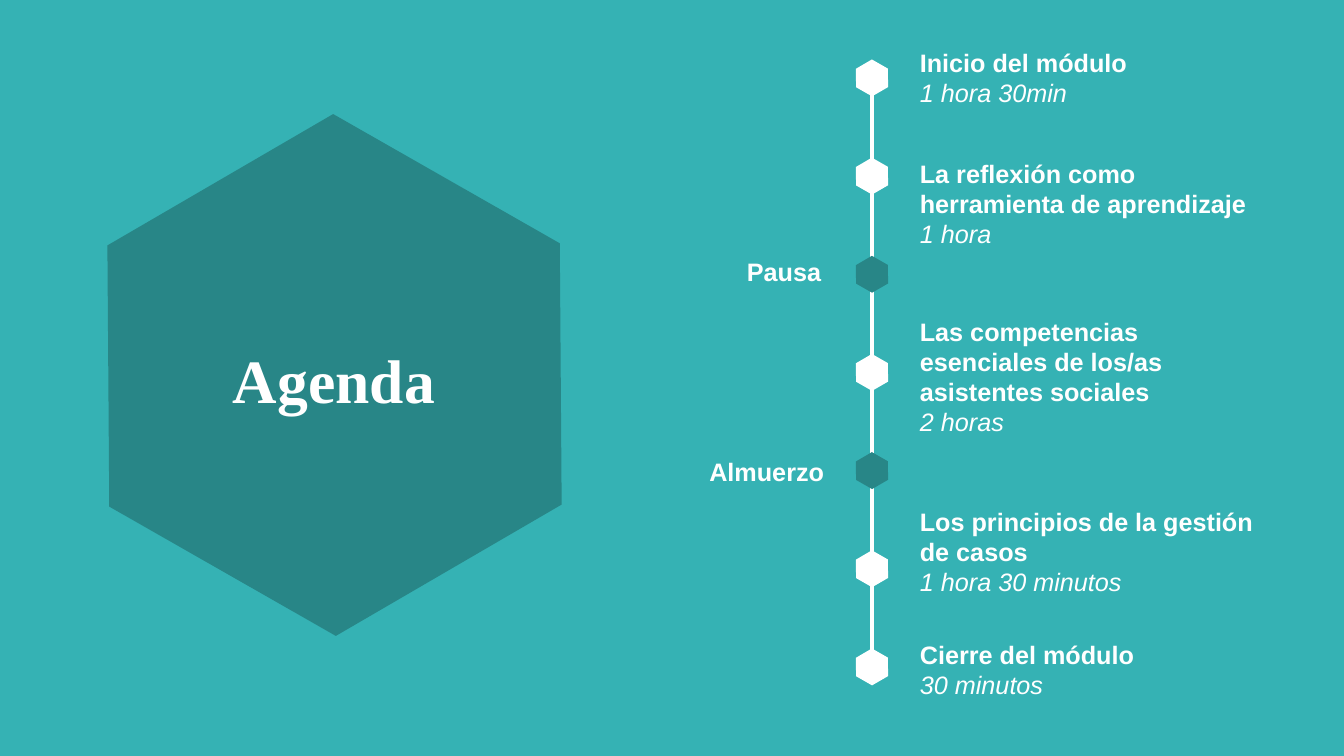
from lxml import etree
from pptx import Presentation
from pptx.dml.color import RGBColor
from pptx.enum.shapes import MSO_CONNECTOR, MSO_SHAPE
from pptx.enum.text import MSO_ANCHOR, PP_ALIGN
from pptx.oxml.ns import qn
from pptx.util import Pt

# Content: (heading, duration, left, top, width, height)
TITLE = "Agenda"
SESSIONS = [
    ("Inicio del módulo", "1 hora 30min", 910, 42, 285, 72),
    ("La reflexión como herramienta de aprendizaje", "1 hora", 910, 153, 362, 102),
    ("Las competencias esenciales de los/as asistentes sociales", "2 horas",
     910, 311, 362, 132),
    ("Los principios de la gestión de casos", "1 hora 30 minutos", 910, 501, 362, 132),
    ("Cierre del módulo", "30 minutos", 910, 634, 362, 72),
]
BREAKS = [("Pausa", 682, 251, 149, 40), ("Almuerzo", 685, 451, 149, 40)]
STOPS = ["session", "session", "break", "session", "break", "session", "session"]

COLORS = {"background": "35B2B4", "dark": "288687", "white": "FFFFFF"}
STOP_COLORS = {"session": "white", "break": "dark"}
HEXAGON_ANGLE = 29.7
LINE_X, FIRST_Y, LAST_Y = 872, 78, 667
STOP_WIDTH, STOP_HEIGHT = 37, 32


def px(length):
    return round(length * 914400 / 100.8)


def color(name):
    return RGBColor.from_string(COLORS[name])


def add_hexagon(left, top, width, height, fill):
    shape = slide.shapes.add_shape(
        MSO_SHAPE.HEXAGON, px(left), px(top), px(width), px(height))
    shape.adjustments[0] = 0.29
    shape.rotation = HEXAGON_ANGLE
    shape.shadow.inherit = False
    shape.fill.solid()
    shape.fill.fore_color.rgb = color(fill)
    shape.line.fill.background()
    return shape


def format_font(paragraph, name, size, bold=True, italic=False):
    font = paragraph.font
    font.name, font.size, font.bold, font.italic = name, Pt(size), bold, italic
    font.color.rgb = color("white")


def add_label(left, top, width, height, heading, duration=None, align=PP_ALIGN.LEFT):
    box = slide.shapes.add_textbox(px(left), px(top), px(width), px(height))
    frame = box.text_frame
    frame.word_wrap = True
    paragraph = frame.paragraphs[0]
    paragraph.text = heading
    paragraph.alignment = align
    format_font(paragraph, "Arial", 18)
    if duration:
        paragraph = frame.add_paragraph()
        paragraph.text = duration
        format_font(paragraph, "Arial", 18, bold=False, italic=True)


presentation = Presentation()
presentation.slide_width, presentation.slide_height = px(1344), px(756)
slide = presentation.slides.add_slide(presentation.slide_layouts[5])
slide.background.fill.solid()
slide.background.fill.fore_color.rgb = color("background")

# Title in front of the large hexagon
large_hexagon = add_hexagon(73, 149, 523, 452, "dark")
title = slide.shapes.title
title.left, title.top, title.width, title.height = px(113), px(353), px(442), px(61)
title.text_frame.text = TITLE
title.text_frame.vertical_anchor = MSO_ANCHOR.MIDDLE
title_paragraph = title.text_frame.paragraphs[0]
title_paragraph.alignment = PP_ALIGN.CENTER
title_paragraph.line_spacing = 0.9
format_font(title_paragraph, "Times New Roman", 44)
large_hexagon._element.addnext(title._element)

# Timeline with evenly spaced stops
timeline = slide.shapes.add_connector(
    MSO_CONNECTOR.STRAIGHT, px(LINE_X), px(FIRST_Y), px(LINE_X), px(LAST_Y))
timeline.line.color.rgb = color("white")
timeline.line.width = Pt(2.25)
etree.SubElement(timeline._element.spPr, qn("a:effectLst"))
pitch = (LAST_Y - FIRST_Y) / (len(STOPS) - 1)
for index, kind in enumerate(STOPS):
    center_y = FIRST_Y + index * pitch
    add_hexagon(LINE_X - STOP_WIDTH / 2, center_y - STOP_HEIGHT / 2,
                STOP_WIDTH, STOP_HEIGHT, STOP_COLORS[kind])

# Sessions on the right, breaks on the left
for heading, duration, *place in SESSIONS:
    add_label(*place, heading, duration)
for heading, *place in BREAKS:
    add_label(*place, heading, align=PP_ALIGN.RIGHT)

presentation.save("out.pptx")
